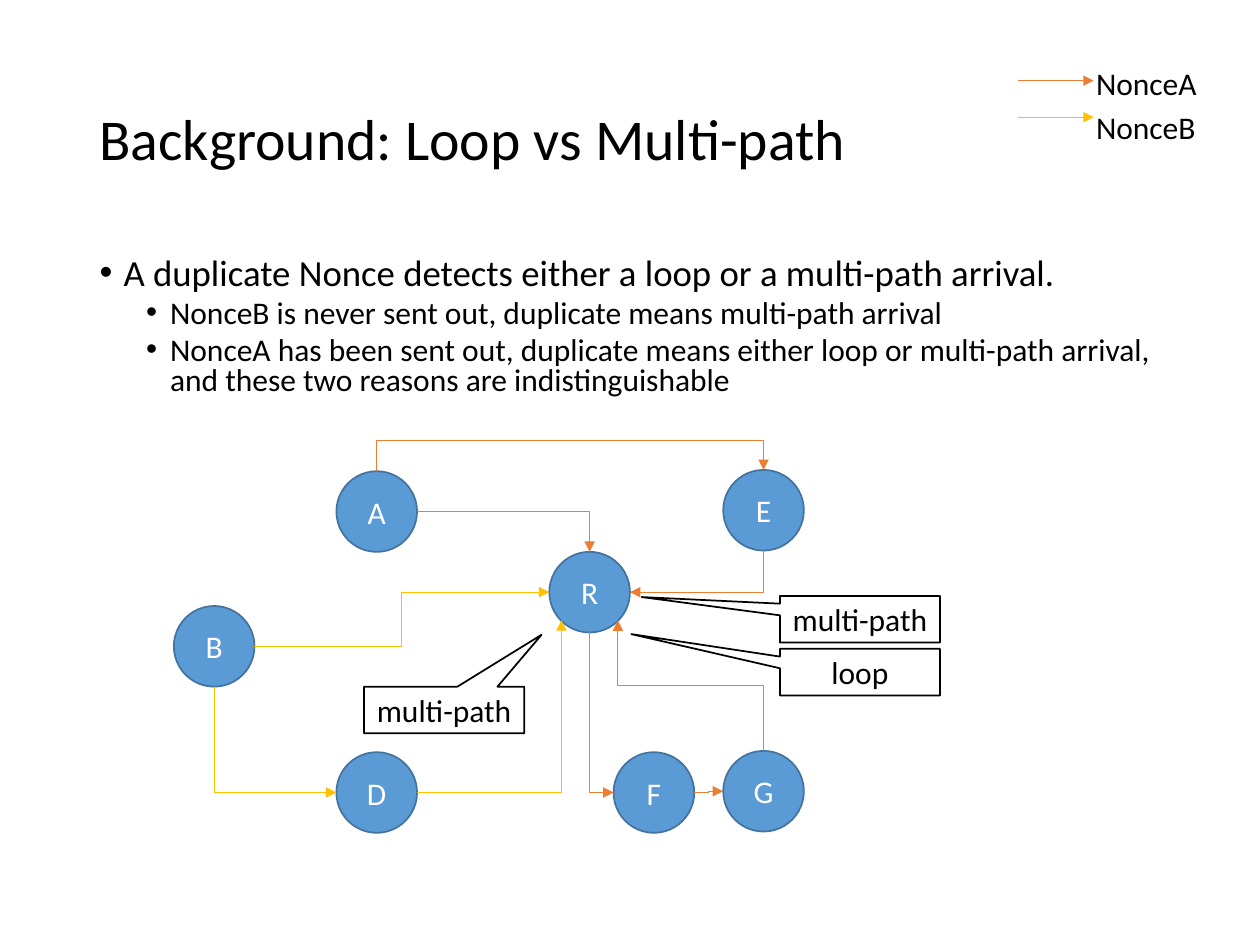
from lxml import etree
from pptx import Presentation
from pptx import util as u
from pptx.dml.color import RGBColor
from pptx.enum import shapes, text
from pptx.oxml.ns import qn

FONT = "Calibri"
BLACK = RGBColor(0x00, 0x00, 0x00)
WHITE = RGBColor(0xFF, 0xFF, 0xFF)
BLUE = RGBColor(0x5B, 0x9B, 0xD5)
DARK_BLUE = RGBColor(0x43, 0x73, 0x9E)
ORANGE = RGBColor(0xED, 0x7D, 0x31)
YELLOW = RGBColor(0xFF, 0xC0, 0x00)

DIAMETER = 0.64
SITES = {"top": (0.5, 0), "left": (0, 0.5), "bottom": (0.5, 1), "right": (1, 0.5),
         "lower left": (0.15, 0.85), "lower right": (0.85, 0.85)}
NODES = {"R": (2.98, 0.89), "A": (1.29, 0.25), "D": (1.29, 2.48), "B": (0, 1.32),
         "E": (4.36, 0.24), "G": (4.36, 2.47), "F": (3.49, 2.48)}
LINKS = [
    ("A", "right", "R", "top", ORANGE, 2, None),
    ("A", "top", "E", "top", ORANGE, 3, 0.25),
    ("E", "bottom", "R", "right", ORANGE, 2, None),
    ("B", "right", "R", "left", YELLOW, 3, None),
    ("B", "bottom", "D", "left", YELLOW, 2, None),
    ("D", "right", "R", "lower left", YELLOW, 2, None),
    ("R", "bottom", "F", "left", ORANGE, 2, None),
    ("G", "top", "R", "lower right", ORANGE, 3, None),
    ("F", "right", "G", "left", ORANGE, 3, None),
]
CALLOUTS = [
    ("multi-path", 1.51, 1.96, (0.609, -1.613)),
    ("multi-path", 4.81, 1.24, (-1.364, -0.475)),
    ("loop", 4.81, 1.66, (-1.429, -0.816)),
]
BULLETS = [
    (0, "A duplicate Nonce detects either a loop or a multi-path arrival."),
    (1, "NonceB is never sent out, duplicate means multi-path arrival"),
    (1, "NonceA has been sent out, duplicate means either loop or multi-path "
        "arrival, and these two reasons are indistinguishable"),
]


def format_runs(p, size, color=BLACK):
    """Set font, size and colour on every run of a paragraph."""
    for r in p.runs:
        r.font.name = FONT
        r.font.size = u.Pt(size)
        r.font.color.rgb = color


def place(sp, box):
    """Move a shape to a box given in inches."""
    sp.left, sp.top, sp.width, sp.height = (u.Inches(v) for v in box)


def add_title(s, box):
    """Fill the title placeholder."""
    sp = s.shapes.title
    place(sp, box)
    tf = sp.text_frame
    tf.text = "Background: Loop vs Multi-path"
    tf.auto_size = text.MSO_AUTO_SIZE.NONE
    tf.vertical_anchor = text.MSO_ANCHOR.MIDDLE
    p = tf.paragraphs[0]
    p.alignment = text.PP_ALIGN.LEFT
    p.line_spacing = 0.9
    format_runs(p, 33)


def add_bullets(s, box):
    """Fill the body placeholder with a two-level list."""
    sp = s.placeholders[1]
    place(sp, box)
    tf = sp.text_frame
    tf.text = "\n".join(words for _, words in BULLETS)
    tf.auto_size = text.MSO_AUTO_SIZE.NONE
    for p, (level, _) in zip(tf.paragraphs, BULLETS):
        p.level = level
        p.line_spacing = 0.8
        p.space_before = u.Pt((7.5, 3.8)[level])
        format_runs(p, (21, 18)[level])
        pPr = p._p.get_or_add_pPr()
        pPr.set("marL", str(u.Inches((0.19, 0.56)[level])))
        pPr.set("indent", str(u.Inches(-0.19)))
        etree.SubElement(pPr, qn("a:buFont")).set("typeface", "Arial")
        etree.SubElement(pPr, qn("a:buChar")).set("char", "•")


def add_label_shape(s, kind, box, label, fill, line, color):
    """Add a filled shape with a centred label."""
    sp = s.shapes.add_shape(kind, *(u.Inches(v) for v in box))
    sp.shadow.inherit = False
    sp.fill.solid()
    sp.fill.fore_color.rgb = fill
    sp.line.color.rgb = line
    sp.line.width = u.Pt(1)
    tf = sp.text_frame
    tf.text = label
    tf.word_wrap = False
    tf.vertical_anchor = text.MSO_ANCHOR.MIDDLE
    p = tf.paragraphs[0]
    p.alignment = text.PP_ALIGN.CENTER
    format_runs(p, 18, color)
    return sp


def add_arrow(s, kind, start, end, color):
    """Add a thin connector with a triangle at its end."""
    cxn = s.shapes.add_connector(kind, *(u.Inches(v) for v in (*start, *end)))
    cxn.line.color.rgb = color
    cxn.line.width = u.Pt(0.5)
    etree.SubElement(cxn.line._get_or_add_ln(), qn("a:tailEnd")).set("type", "triangle")
    etree.SubElement(cxn._element.spPr, qn("a:effectLst"))
    return cxn


def add_elbow(s, start, end, color, segments, vertical, detour):
    """Add an elbow arrow, turned a quarter when it leaves vertically."""
    (x1, y1), (x2, y2) = start, end
    down = y2 > y1
    if vertical:
        cx, cy = (x1 + x2) / 2, (y1 + y2) / 2
        half_w = abs(y2 - y1) / 2
        half_h = (x1 - x2 if down else x2 - x1) / 2
        start, end = (cx - half_w, cy - half_h), (cx + half_w, cy + half_h)
    cxn = add_arrow(s, shapes.MSO_CONNECTOR.ELBOW, start, end, color)
    spPr = cxn._element.spPr
    if vertical:
        spPr.find(qn("a:xfrm")).set("rot", str((90 if down else 270) * 60000))
    geom = spPr.find(qn("a:prstGeom"))
    geom.set("prst", f"bentConnector{segments}")
    if detour:
        gd = etree.SubElement(geom.find(qn("a:avLst")), qn("a:gd"))
        gd.set("name", "adj1")
        gd.set("fmla", f"val {round(detour / abs(y2 - y1) * 100000)}")


def add_diagram(s, left, top):
    """Draw the network of nodes, its links and the callouts."""
    def site(node, side):
        return tuple(o + n + f * DIAMETER
                     for o, n, f in zip((left, top), NODES[node], SITES[side]))

    for name, (x, y) in NODES.items():
        add_label_shape(s, shapes.MSO_SHAPE.OVAL, (left + x, top + y, DIAMETER, DIAMETER),
                        name, BLUE, DARK_BLUE, WHITE)
    for node, side, target, target_side, color, segments, detour in LINKS:
        add_elbow(s, site(node, side), site(target, target_side), color, segments,
                  side in ("top", "bottom"), detour)
    for label, x, y, tip in CALLOUTS:
        sp = add_label_shape(s, shapes.MSO_SHAPE.RECTANGULAR_CALLOUT,
                             (left + x, top + y, 1.27, 0.37), label, WHITE, BLACK, BLACK)
        sp.adjustments[0], sp.adjustments[1] = tip


def add_legend(s, left, top):
    """Draw the key to the two arrow colours."""
    rows = [("NonceA", ORANGE, 0.18, 0), ("NonceB", YELLOW, 0.47, 0.35)]
    for label, color, line_y, text_y in rows:
        add_arrow(s, shapes.MSO_CONNECTOR.STRAIGHT, (left, top + line_y),
                  (left + 0.6, top + line_y), color)
        box = (left + 0.52, top + text_y, 1.01, 0.4)
        tf = s.shapes.add_textbox(*(u.Inches(v) for v in box)).text_frame
        tf.text = label
        tf.word_wrap = False
        tf.auto_size = text.MSO_AUTO_SIZE.SHAPE_TO_FIT_TEXT
        format_runs(tf.paragraphs[0], 18)


def main():
    """Build and save the slide."""
    prs = Presentation()
    prs.slide_width, prs.slide_height = u.Inches(10), u.Inches(7.5)
    s = prs.slides.add_slide(prs.slide_layouts[1])
    add_title(s, (0.69, 0.4, 8.62, 1.45))
    add_bullets(s, (0.69, 2, 8.62, 1.33))
    add_diagram(s, 1.38, 3.49)
    add_legend(s, 8.08, 0.46)
    prs.save("out.pptx")


if __name__ == "__main__":
    main()
